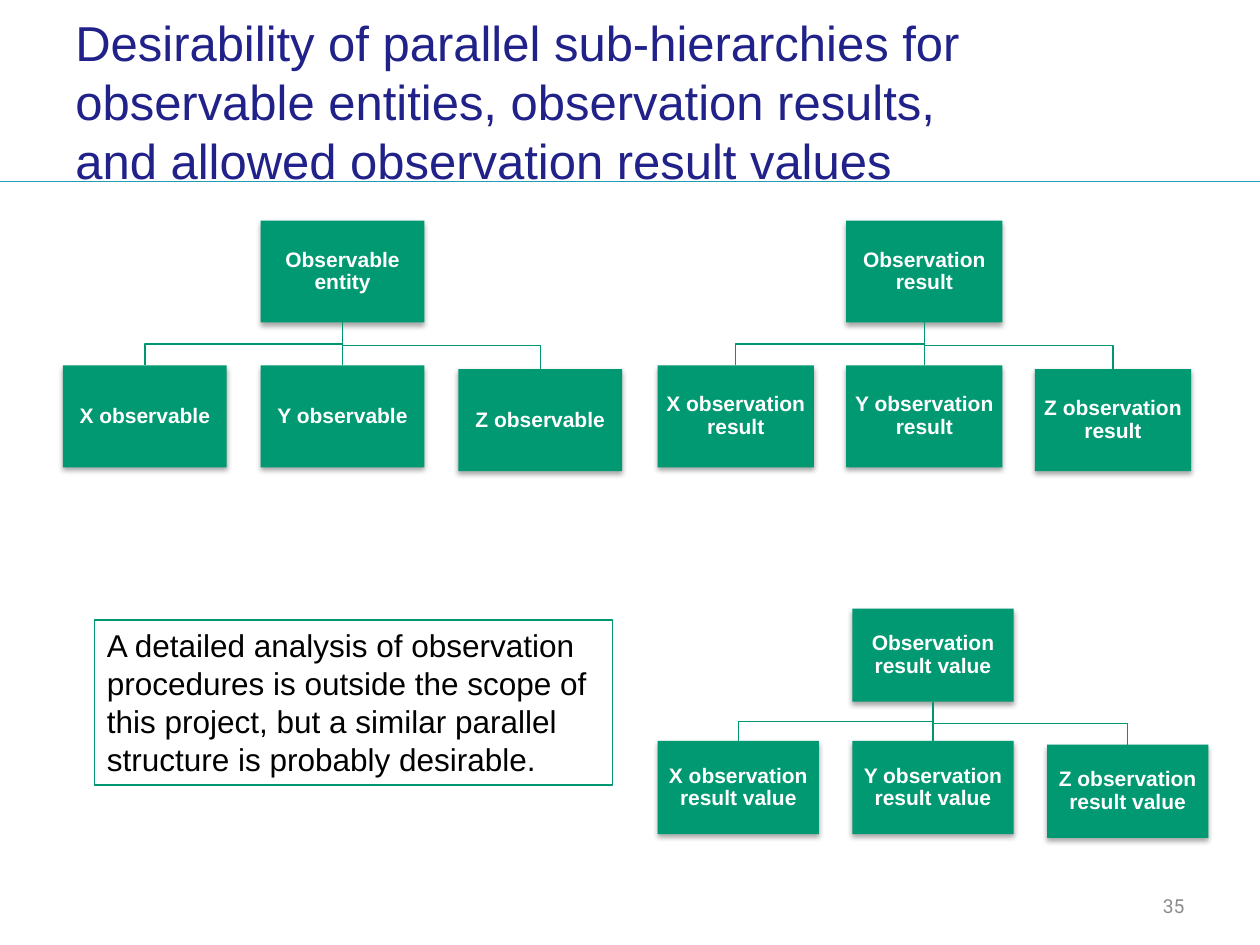
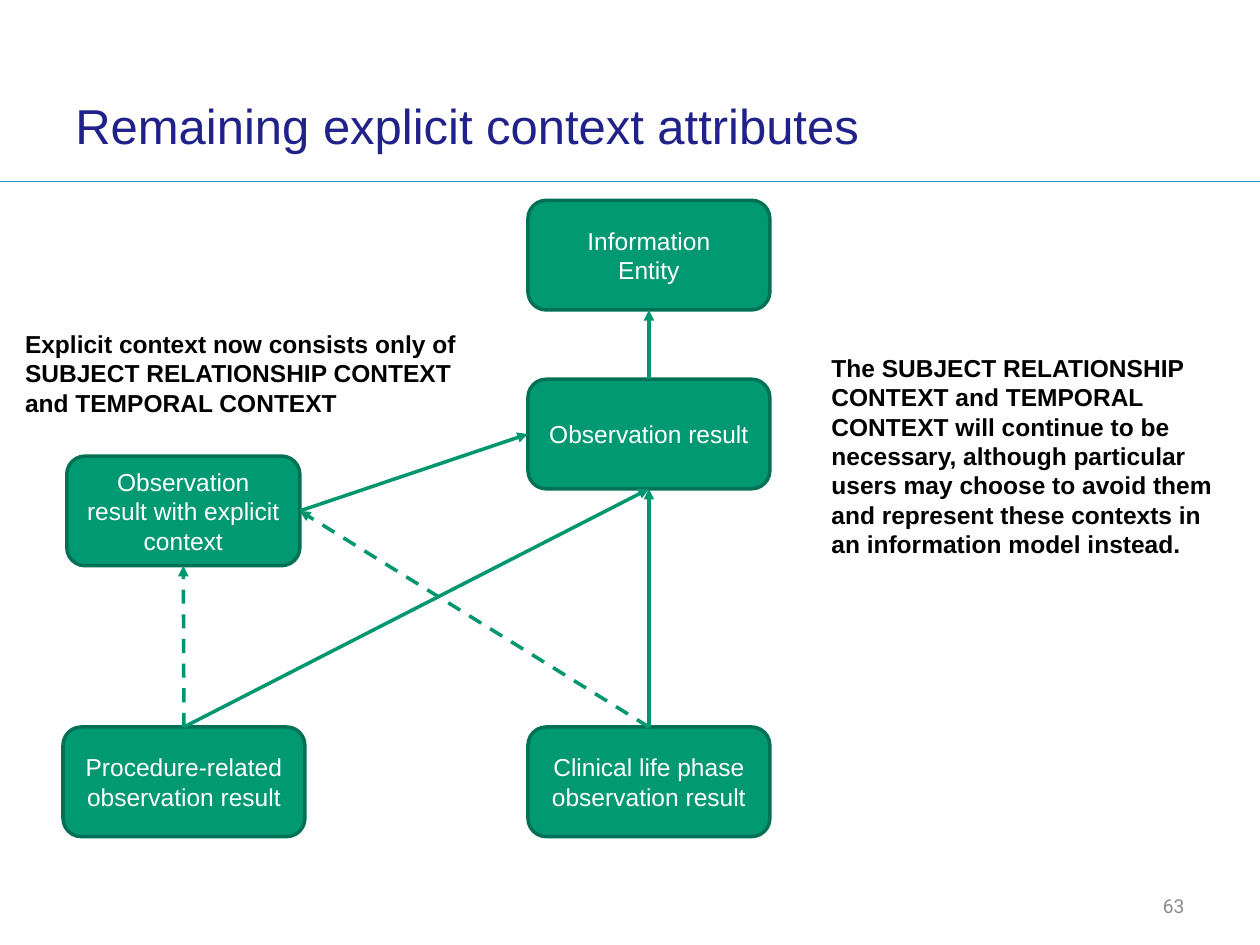
"""Build two slides on observation hierarchies and explicit context attributes."""
from dataclasses import dataclass

from lxml.etree import SubElement
from pptx import Presentation
from pptx.dml.color import RGBColor
from pptx.enum.dml import MSO_LINE
from pptx.enum.shapes import MSO_CONNECTOR as Link, MSO_SHAPE as Preset
from pptx.enum.text import MSO_ANCHOR as Anchor, PP_ALIGN as Align
from pptx.oxml.ns import qn
from pptx.shapes.autoshape import Shape
from pptx.shapes.connector import Connector
from pptx.slide import Slide
from pptx.util import Inches, Pt

TOP, LEFT, BOTTOM, RIGHT = range(4)


@dataclass(frozen=True)
class Theme:
    title: str = "21218A"
    rule: str = "229BB8"
    box: str = "009972"
    border: str = "007154"
    link: str = "00966F"
    light: str = "FFFFFF"
    dark: str = "000000"
    muted: str = "8C8C8C"
    font: str = "Arial"
    number_font: str = "Roboto"
    title_size: float = 28
    note_size: float = 18
    body_size: float = 14
    tree_size: float = 12
    number_size: float = 11
    thin: float = 0.75
    thick: float = 2


@dataclass(frozen=True)
class Frame:
    left: float
    top: float
    width: float
    height: float

    def lengths(self) -> tuple[Inches, ...]:
        return tuple(Inches(value) for value in (self.left, self.top, self.width, self.height))


@dataclass(frozen=True)
class TextStyle:
    size: float
    color: str
    bold: bool = False
    font: str = "Arial"
    align: Align = Align.LEFT
    anchor: Anchor = Anchor.TOP
    margins: tuple[float, float] = (0.1, 0.05)
    spacing: float = 1.0


@dataclass(frozen=True)
class Tree:
    left: float
    top: float
    width: float
    height: float
    root: str
    children: tuple[str, ...]


@dataclass(frozen=True)
class Node:
    name: str
    frame: Frame
    paragraphs: tuple[str, ...]


@dataclass(frozen=True)
class Arrow:
    source: str
    source_side: int
    target: str
    target_side: int
    dashed: bool = False


THEME = Theme()
TITLE = TextStyle(THEME.title_size, THEME.title, anchor=Anchor.MIDDLE, margins=(0.1, 0.1))
NUMBER = TextStyle(THEME.number_size, THEME.muted, font=THEME.number_font,
                   align=Align.RIGHT, anchor=Anchor.MIDDLE)
TREE_LABEL = TextStyle(THEME.tree_size, THEME.light, True, align=Align.CENTER,
                       anchor=Anchor.MIDDLE, margins=(0.01, 0.01), spacing=0.9)
NODE_LABEL = TextStyle(THEME.body_size, THEME.light, align=Align.CENTER, anchor=Anchor.MIDDLE)
NOTE = TextStyle(THEME.note_size, THEME.dark)
REMARK = TextStyle(THEME.body_size, THEME.dark, True)

TREES = (
    Tree(5.22, 1.75, 1.24, 0.81, "Observation result",
         tuple(f"{letter} observation result" for letter in "XYZ")),
    Tree(0.5, 1.75, 1.3, 0.81, "Observable entity",
         tuple(f"{letter} observable" for letter in "XYZ")),
    Tree(5.22, 4.83, 1.28, 0.74, "Observation result value",
         tuple(f"{letter} observation result value" for letter in "XYZ")),
)
COLUMN_STEP = 1.207
ROW_STEP = 1.42
LAST_CHILD_DROP = 0.03

NODES = (
    Node("explicit", Frame(0.53, 3.62, 1.85, 0.87), ("Observation result with explicit context",)),
    Node("procedure", Frame(0.5, 5.77, 1.92, 0.87), ("Procedure-related observation result",)),
    Node("phase", Frame(4.19, 5.77, 1.92, 0.87), ("Clinical life phase observation result",)),
    Node("entity", Frame(4.19, 1.59, 1.92, 0.87), ("Information", "Entity")),
    Node("result", Frame(4.19, 3.01, 1.92, 0.87), ("Observation result",)),
)
ARROWS = (
    Arrow("result", TOP, "entity", BOTTOM),
    Arrow("procedure", TOP, "explicit", BOTTOM, dashed=True),
    Arrow("explicit", RIGHT, "result", LEFT),
    Arrow("phase", TOP, "result", BOTTOM),
    Arrow("phase", TOP, "explicit", RIGHT, dashed=True),
    Arrow("procedure", TOP, "result", BOTTOM),
)


def rgb(color: str) -> RGBColor:
    return RGBColor.from_string(color)


def write(shape: Shape, paragraphs: tuple[str, ...], style: TextStyle) -> None:
    text_frame = shape.text_frame
    text_frame.word_wrap = True
    text_frame.vertical_anchor = style.anchor
    side, end = (Inches(margin) for margin in style.margins)
    text_frame.margin_left = text_frame.margin_right = side
    text_frame.margin_top = text_frame.margin_bottom = end
    for index, text in enumerate(paragraphs):
        paragraph = text_frame.add_paragraph() if index else text_frame.paragraphs[0]
        paragraph.alignment = style.align
        paragraph.line_spacing = style.spacing
        for line_index, line in enumerate(text.split("\n")):
            if line_index:
                paragraph.add_line_break()
            run = paragraph.add_run()
            run.text = line
            run.font.name = style.font
            run.font.size = Pt(style.size)
            run.font.bold = style.bold
            run.font.color.rgb = rgb(style.color)


def add_text(slide: Slide, frame: Frame, text: str, style: TextStyle) -> Shape:
    shape = slide.shapes.add_textbox(*frame.lengths())
    write(shape, (text,), style)
    return shape


def add_box(slide: Slide, preset: Preset, frame: Frame,
            paragraphs: tuple[str, ...], style: TextStyle) -> Shape:
    shape = slide.shapes.add_shape(preset, *frame.lengths())
    shape.shadow.inherit = False
    shape.fill.solid()
    shape.fill.fore_color.rgb = rgb(THEME.box)
    write(shape, paragraphs, style)
    return shape


def add_shadow(shape: Shape) -> None:
    effects = shape._element.spPr.find(qn("a:effectLst"))
    shadow = SubElement(effects, qn("a:outerShdw"), blurRad=str(Pt(3.1)), dist=str(Pt(1.8)),
                        dir="5400000", rotWithShape="0")
    color = SubElement(shadow, qn("a:srgbClr"), val=THEME.dark)
    SubElement(color, qn("a:alpha"), val="35000")


def add_link(slide: Slide, kind: Link, points: tuple[int, int, int, int] = (0, 0, 0, 0),
             color: str = THEME.link, width: float = THEME.thin) -> Connector:
    connector = slide.shapes.add_connector(kind, *points)
    connector.line.color.rgb = rgb(color)
    connector.line.width = Pt(width)
    SubElement(connector._element.spPr, qn("a:effectLst"))
    return connector


def add_straight(slide: Slide, source: Shape, source_side: int, target: Shape,
                 target_side: int, width: float = THEME.thin) -> Connector:
    connector = add_link(slide, Link.STRAIGHT, width=width)
    connector.begin_connect(source, source_side)
    connector.end_connect(target, target_side)
    return connector


def add_elbow(slide: Slide, parent: Shape, child: Shape) -> None:
    start_x, start_y = parent.left + parent.width // 2, parent.top + parent.height
    end_x, end_y = child.left + child.width // 2, child.top
    across, down = abs(end_x - start_x), end_y - start_y
    left = (start_x + end_x - down) // 2
    top = (start_y + end_y - across) // 2
    goes_right = end_x > start_x
    begin, end = (left + down, left) if goes_right else (left, left + down)
    connector = add_link(slide, Link.ELBOW, (begin, top, end, top + across))
    transform = connector._element.spPr.find(qn("a:xfrm"))
    transform.set("rot", "16200000" if goes_right else "5400000")


def add_tree(slide: Slide, tree: Tree) -> None:
    def place(column: int, top: float, label: str) -> Shape:
        left = tree.left + column * tree.width * COLUMN_STEP
        frame = Frame(left, top, tree.width, tree.height)
        box = add_box(slide, Preset.RECTANGLE, frame, (label,), TREE_LABEL)
        box.line.fill.background()
        add_shadow(box)
        return box

    middle, last = len(tree.children) // 2, len(tree.children) - 1
    root = place(middle, tree.top, tree.root)
    for column, label in enumerate(tree.children):
        drop = LAST_CHILD_DROP if column == last else 0
        child = place(column, tree.top + tree.height * ROW_STEP + drop, label)
        if column == middle:
            add_straight(slide, child, TOP, root, BOTTOM)
        else:
            add_elbow(slide, root, child)


def add_arrow(slide: Slide, arrow: Arrow, boxes: dict[str, Shape]) -> None:
    connector = add_straight(slide, boxes[arrow.source], arrow.source_side,
                             boxes[arrow.target], arrow.target_side, THEME.thick)
    if arrow.dashed:
        connector.line.dash_style = MSO_LINE.DASH
    SubElement(connector.line._get_or_add_ln(), qn("a:tailEnd"), type="triangle")


def add_slide(presentation: Presentation, title: str, title_frame: Frame, number: int) -> Slide:
    slide = presentation.slides.add_slide(presentation.slide_layouts[6])
    rule = (0, Inches(1.44), Inches(10), Inches(1.44))
    add_link(slide, Link.STRAIGHT, rule, THEME.rule)
    add_text(slide, title_frame, title, TITLE)
    add_text(slide, Frame(7.17, 7.03, 2.33, 0.32), str(number), NUMBER)
    return slide


def add_hierarchies(presentation: Presentation) -> None:
    slide = add_slide(
        presentation,
        "Desirability of parallel sub-hierarchies for observable entities, "
        "observation results, and allowed observation result values",
        Frame(0.5, 0.18, 7.33, 1.24), 35)
    for tree in TREES:
        add_tree(slide, tree)
    note = add_text(
        slide, Frame(0.75, 4.92, 4.11, 1.31),
        "A detailed analysis of observation procedures is outside the scope of this project, "
        "but a similar parallel structure is probably desirable.", NOTE)
    note.line.color.rgb = rgb(THEME.link)
    note.line.width = Pt(THEME.thin)


def add_context(presentation: Presentation) -> None:
    slide = add_slide(presentation, "Remaining explicit context attributes",
                      Frame(0.5, 0.58, 7.25, 0.83), 63)
    boxes = {}
    for node in NODES:
        box = add_box(slide, Preset.ROUNDED_RECTANGLE, node.frame, node.paragraphs, NODE_LABEL)
        box.line.color.rgb = rgb(THEME.border)
        box.line.width = Pt(THEME.thick)
        boxes[node.name] = box
    for arrow in ARROWS:
        add_arrow(slide, arrow, boxes)
    add_text(slide, Frame(0.1, 2.56, 3.85, 0.81),
             "Explicit context now consists only of\n"
             "SUBJECT RELATIONSHIP CONTEXT and TEMPORAL CONTEXT", REMARK)
    add_text(slide, Frame(6.5, 2.75, 3.25, 1.99),
             "The SUBJECT RELATIONSHIP CONTEXT and TEMPORAL CONTEXT will continue to be "
             "necessary, although particular users may choose to avoid them and represent "
             "these contexts in an information model instead.", REMARK)


def main() -> None:
    presentation = Presentation()
    presentation.slide_width, presentation.slide_height = Inches(10), Inches(7.5)
    add_hierarchies(presentation)
    add_context(presentation)
    presentation.save("out.pptx")


if __name__ == "__main__":
    main()
